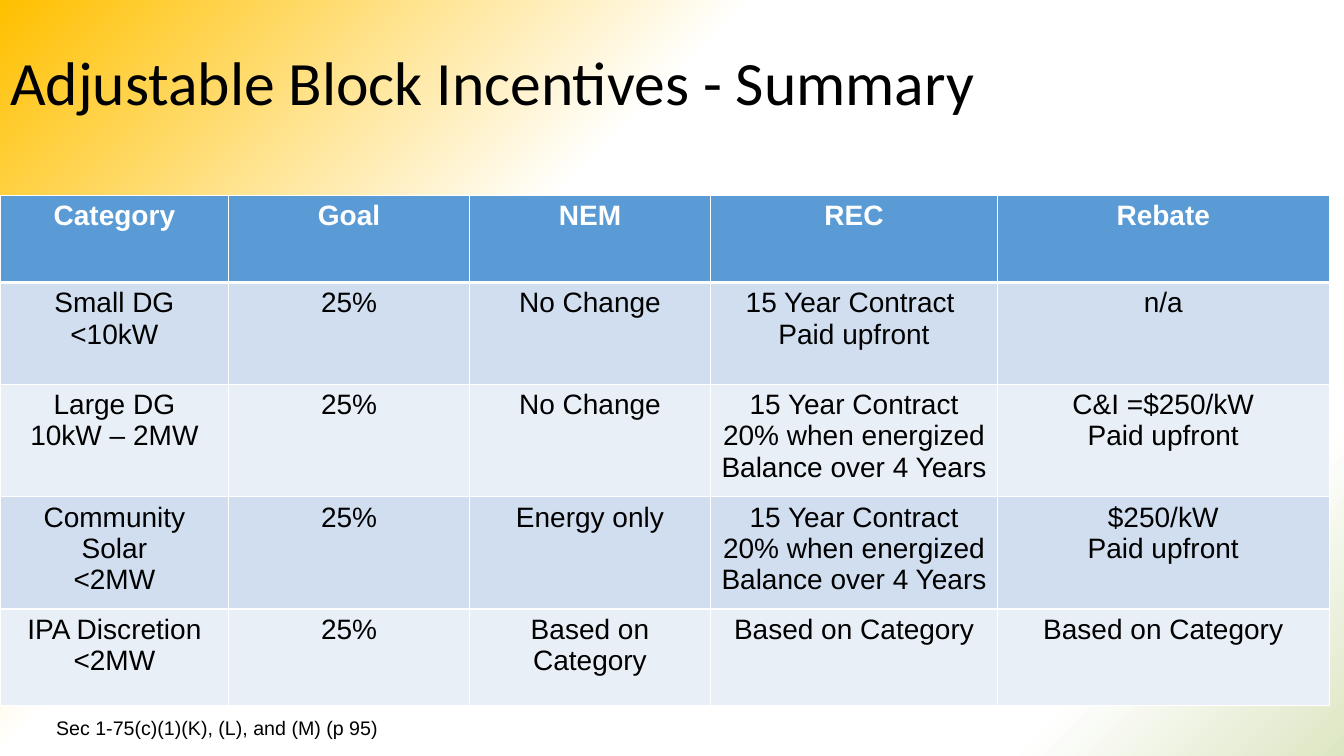
"""Build the slide that sums up the adjustable block incentives."""
from pptx import Presentation
from pptx.dml.color import RGBColor as RGB
from pptx.enum.text import MSO_ANCHOR as Anchor, MSO_AUTO_SIZE as Fit, PP_ALIGN as Align
from pptx.oxml import parse_xml
from pptx.oxml.ns import nsdecls, qn
from pptx.util import Pt

PX = 9525
BLACK = RGB(0, 0, 0)
WHITE = RGB(255, 255, 255)
BLUE = RGB(0x5B, 0x9B, 0xD5)
PALE = RGB(0xD0, 0xDE, 0xEF)
LIGHT = RGB(0xE9, 0xEF, 0xF7)
GOLD = RGB(0xFF, 0xC0, 0)
GREEN = RGB(0xDD, 0xE6, 0xC3)


def style(par, size, color, name="Arial", align=Align.LEFT, bold=False):
    par.alignment = align
    font = par.font
    font.size, font.name, font.bold = Pt(size), name, bold
    font.color.rgb = color


def edge(cell, side, width):
    cell._tc.get_or_add_tcPr().append(parse_xml(
        f'<a:{side} {nsdecls("a")} w="{Pt(width)}"><a:solidFill>'
        f'<a:srgbClr val="{WHITE}"/></a:solidFill></a:{side}>'))


deck = Presentation()
deck.slide_width, deck.slide_height = 1280 * PX, 720 * PX
slide = deck.slides.add_slide(deck.slide_layouts[5])

slide.background.fill.gradient()
grad = slide.element.find(".//" + qn("a:gradFill"))
stops = "".join(
    f'<a:gs pos="{pos * 1000}"><a:srgbClr val="{color}"/></a:gs>'
    for pos, color in [(0, GOLD), (36, WHITE), (84, WHITE), (100, GREEN)])
grad.getparent().replace(grad, parse_xml(
    f'<a:gradFill {nsdecls("a")} rotWithShape="1"><a:gsLst>{stops}</a:gsLst>'
    '<a:path path="circle"><a:fillToRect r="100000" b="100000"/></a:path>'
    '</a:gradFill>'))

title = slide.shapes.title
title.left, title.top, title.width, title.height = 0, 12 * PX, 1192 * PX, 139 * PX
frame = title.text_frame
frame.text = "Adjustable Block Incentives - Summary"
frame.auto_size = Fit.NONE
frame.vertical_anchor = Anchor.MIDDLE
style(frame.paragraphs[0], 44, BLACK, "Calibri")
frame.paragraphs[0].line_spacing = 0.9

note = slide.shapes.add_textbox(44 * PX, 672 * PX, 995 * PX, 116 * PX)
frame = note.text_frame
frame.word_wrap = True
frame.margin_top = frame.margin_bottom = frame.margin_left
frame.text = "Sec 1-75(c)(1)(K), (L), and (M) (p 95)"
style(frame.paragraphs[0], 14, BLACK)

STAGED = "15 Year Contract\n20% when energized\nBalance over 4 Years"
BASED = "Based on Category"
ROWS = [
    ["Category", "Goal", "NEM", "REC", "Rebate"],
    ["Small DG\n<10kW", "25%", "No Change", "15 Year Contract \nPaid upfront", "n/a"],
    ["Large DG\n10kW – 2MW", "25%", "No Change", STAGED, "C&I =$250/kW\nPaid upfront"],
    ["Community Solar\n<2MW", "25%", "Energy only", STAGED, "$250/kW\nPaid upfront"],
    ["IPA Discretion\n<2MW", "25%", BASED, BASED, BASED],
]
WIDTHS = [218, 229, 230, 273, 316]
HEIGHTS = [83, 97, 107, 107, 92]

table = slide.shapes.add_table(
    len(ROWS), len(WIDTHS), 0, 186 * PX, sum(WIDTHS) * PX, sum(HEIGHTS) * PX).table
for col, width in zip(table.columns, WIDTHS):
    col.width = width * PX
for r, (row, high, texts) in enumerate(zip(table.rows, HEIGHTS, ROWS)):
    row.height = high * PX
    head = r == 0
    for cell, text in zip(row.cells, texts):
        cell.text = text
        for par in cell.text_frame.paragraphs:
            style(par, 20, WHITE if head else BLACK, align=Align.CENTER, bold=head)
        edge(cell, "lnL", 1)
        edge(cell, "lnR", 1)
        edge(cell, "lnT", 3 if r == 1 else 1)
        edge(cell, "lnB", 3 if head else 1)
        cell.fill.solid()
        cell.fill.fore_color.rgb = BLUE if head else PALE if r % 2 else LIGHT

deck.save("out.pptx")
